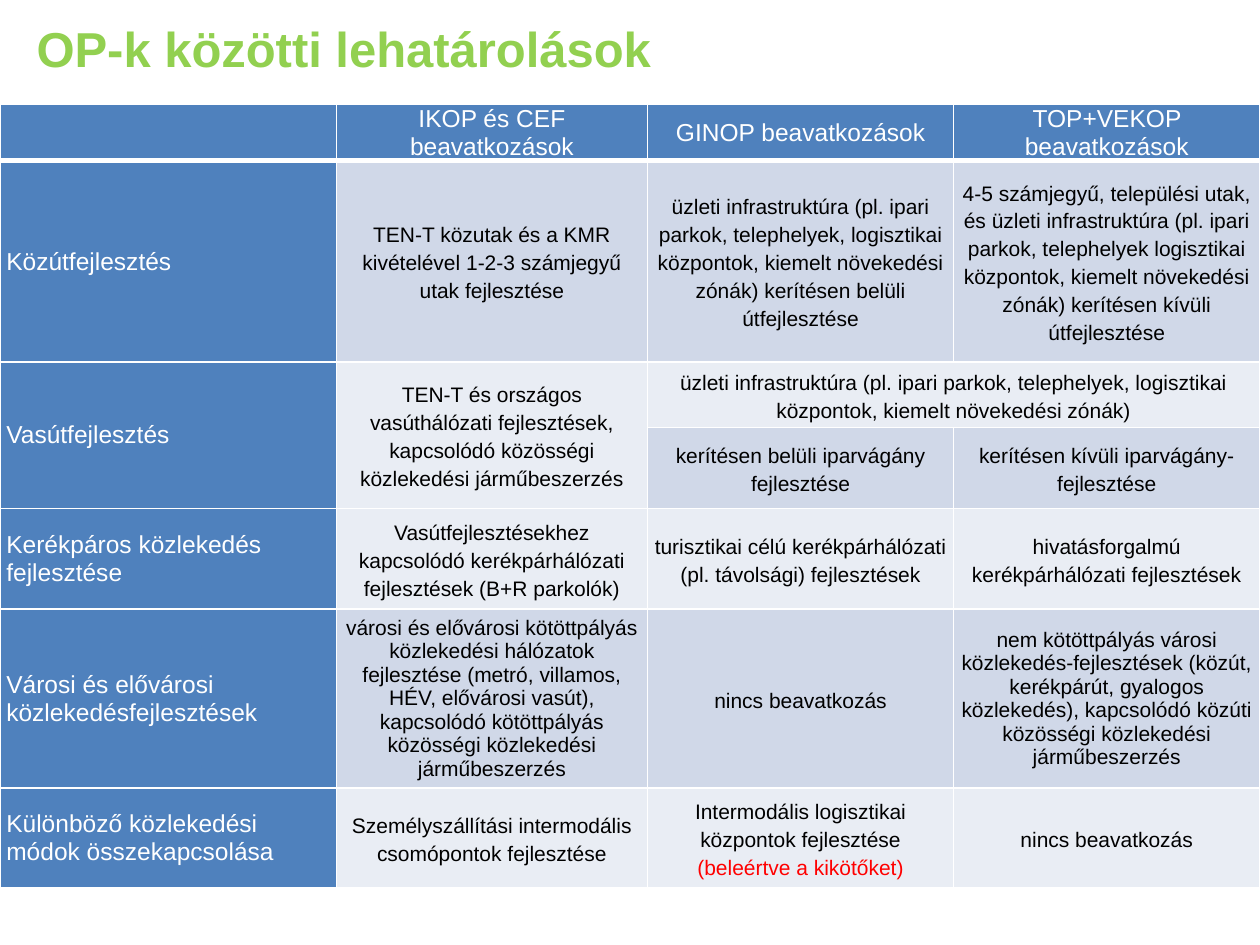
"""Build a slide with a table that delimits the operational programmes."""
from dataclasses import dataclass

from lxml import etree
from pptx import Presentation
from pptx.dml.color import RGBColor
from pptx.enum.text import MSO_ANCHOR, PP_ALIGN
from pptx.oxml.ns import qn
from pptx.util import Inches, Pt

LEFT, CENTER = PP_ALIGN.LEFT, PP_ALIGN.CENTER
TOP, MIDDLE = MSO_ANCHOR.TOP, MSO_ANCHOR.MIDDLE

GREEN = RGBColor(0x92, 0xD0, 0x50)
BLUE = RGBColor(0x4F, 0x81, 0xBD)
DARK_BAND = RGBColor(0xD0, 0xD8, 0xE8)
LIGHT_BAND = RGBColor(0xE9, 0xED, 0xF4)
WHITE = RGBColor(0xFF, 0xFF, 0xFF)
BLACK = RGBColor(0, 0, 0)
RED = RGBColor(0xFF, 0, 0)

FONT = "Arial"
TITLE_ONLY_LAYOUT = 5
COLUMN_WIDTHS = (2.67, 2.47, 2.43, 2.43)
ROW_HEIGHTS = (0.32, 1.6, 0.52, 0.64, 0.8, 1.42, 0.79)
CELL_FORMAT = {
    "margin_left": Inches(0.05),
    "margin_right": Inches(0.05),
    "margin_top": 0,
    "margin_bottom": 0,
    "vertical_anchor": MIDDLE,
}


@dataclass(frozen=True)
class Entry:
    text: str = ""
    accent: str = ""
    row_span: int = 1
    column_span: int = 1
    exact_spacing: bool = True


ROWS = (
    (
        Entry(),
        Entry("IKOP és CEF beavatkozások"),
        Entry("GINOP beavatkozások"),
        Entry("TOP+VEKOP beavatkozások"),
    ),
    (
        Entry("Közútfejlesztés"),
        Entry("TEN-T közutak és a KMR kivételével 1-2-3 számjegyű utak fejlesztése"),
        Entry("üzleti infrastruktúra (pl. ipari parkok, telephelyek, logisztikai "
              "központok, kiemelt növekedési zónák) kerítésen belüli útfejlesztése"),
        Entry("4-5 számjegyű, települési utak, és üzleti infrastruktúra (pl. ipari "
              "parkok, telephelyek logisztikai központok, kiemelt növekedési zónák) "
              "kerítésen kívüli útfejlesztése"),
    ),
    (
        Entry("Vasútfejlesztés", row_span=2),
        Entry("TEN-T és országos vasúthálózati fejlesztések, kapcsolódó közösségi "
              "közlekedési járműbeszerzés", row_span=2),
        Entry("üzleti infrastruktúra (pl. ipari parkok, telephelyek, logisztikai "
              "központok, kiemelt növekedési zónák)", column_span=2),
        Entry(),
    ),
    (
        Entry(),
        Entry(),
        Entry("kerítésen belüli iparvágány fejlesztése"),
        Entry("kerítésen kívüli iparvágány-fejlesztése"),
    ),
    (
        Entry("Kerékpáros közlekedés fejlesztése"),
        Entry("Vasútfejlesztésekhez kapcsolódó kerékpárhálózati fejlesztések "
              "(B+R parkolók)"),
        Entry("turisztikai célú kerékpárhálózati (pl. távolsági) fejlesztések"),
        Entry("hivatásforgalmú kerékpárhálózati fejlesztések"),
    ),
    (
        Entry("Városi és elővárosi közlekedésfejlesztések"),
        Entry("városi és elővárosi kötöttpályás közlekedési hálózatok fejlesztése "
              "(metró, villamos, HÉV, elővárosi vasút), kapcsolódó kötöttpályás "
              "közösségi közlekedési járműbeszerzés", exact_spacing=False),
        Entry("nincs beavatkozás"),
        Entry("nem kötöttpályás városi közlekedés-fejlesztések (közút, kerékpárút, "
              "gyalogos közlekedés), kapcsolódó közúti közösségi közlekedési "
              "járműbeszerzés", exact_spacing=False),
    ),
    (
        Entry("Különböző közlekedési módok összekapcsolása"),
        Entry("Személyszállítási intermodális csomópontok fejlesztése"),
        Entry("Intermodális logisztikai központok fejlesztése ",
              accent="(beleértve a kikötőket)"),
        Entry("nincs beavatkozás"),
    ),
)


def apply_format(target, values: dict) -> None:
    for name, value in values.items():
        setattr(target, name, value)


def add_run(paragraph, text: str, size: int, color: RGBColor, bold: bool = False) -> None:
    run = paragraph.add_run()
    run.text = text
    apply_format(run.font, {"name": FONT, "size": Pt(size), "bold": bold})
    run.font.color.rgb = color


def set_borders(cell, bottom_width: int) -> None:
    properties = cell._tc.get_or_add_tcPr()
    for side, width in (("L", 1), ("R", 1), ("T", 1), ("B", bottom_width)):
        line = etree.SubElement(properties, qn(f"a:ln{side}"), w=str(Pt(width)))
        fill = etree.SubElement(line, qn("a:solidFill"))
        etree.SubElement(fill, qn("a:srgbClr"), val=str(WHITE))


def fill_cell(cell, entry: Entry, row: int, column: int) -> None:
    is_heading = row == 0 or column == 0
    band = DARK_BAND if row % 2 else LIGHT_BAND
    apply_format(cell, CELL_FORMAT)
    set_borders(cell, 3 if row == 0 else 1)
    cell.fill.solid()
    cell.fill.fore_color.rgb = BLUE if is_heading else band
    size = 14 if is_heading else 12
    paragraph = cell.text_frame.paragraphs[0]
    paragraph.alignment = CENTER if column else LEFT
    paragraph.font.size = Pt(size)
    if entry.exact_spacing:
        paragraph.line_spacing = Pt(16)
    if entry.text:
        add_run(paragraph, entry.text, size, WHITE if is_heading else BLACK)
    if entry.accent:
        add_run(paragraph, entry.accent, size, RED)


def add_programme_table(slide) -> None:
    table = slide.shapes.add_table(
        len(ROW_HEIGHTS), len(COLUMN_WIDTHS), 0, Inches(0.83),
        Inches(sum(COLUMN_WIDTHS)), Inches(sum(ROW_HEIGHTS)),
    ).table
    for column, width in zip(table.columns, COLUMN_WIDTHS):
        column.width = Inches(width)
    for row, height in zip(table.rows, ROW_HEIGHTS):
        row.height = Inches(height)
    for row, entries in enumerate(ROWS):
        for column, entry in enumerate(entries):
            cell = table.cell(row, column)
            fill_cell(cell, entry, row, column)
            if entry.row_span > 1 or entry.column_span > 1:
                cell.merge(table.cell(row + entry.row_span - 1,
                                      column + entry.column_span - 1))


def set_title(slide, text: str) -> None:
    title = slide.shapes.title
    apply_format(title, {"left": Inches(0.19), "top": Inches(0.1),
                         "width": Inches(5.34), "height": Inches(0.57)})
    apply_format(title.text_frame, {"word_wrap": False, "vertical_anchor": TOP})
    paragraph = title.text_frame.paragraphs[0]
    paragraph.alignment = LEFT
    add_run(paragraph, text, 28, GREEN, bold=True)


def main() -> None:
    presentation = Presentation()
    presentation.slide_width = Inches(10)
    presentation.slide_height = Inches(7.5)
    slide = presentation.slides.add_slide(presentation.slide_layouts[TITLE_ONLY_LAYOUT])
    set_title(slide, "OP-k közötti lehatárolások")
    add_programme_table(slide)
    presentation.save("out.pptx")


if __name__ == "__main__":
    main()
